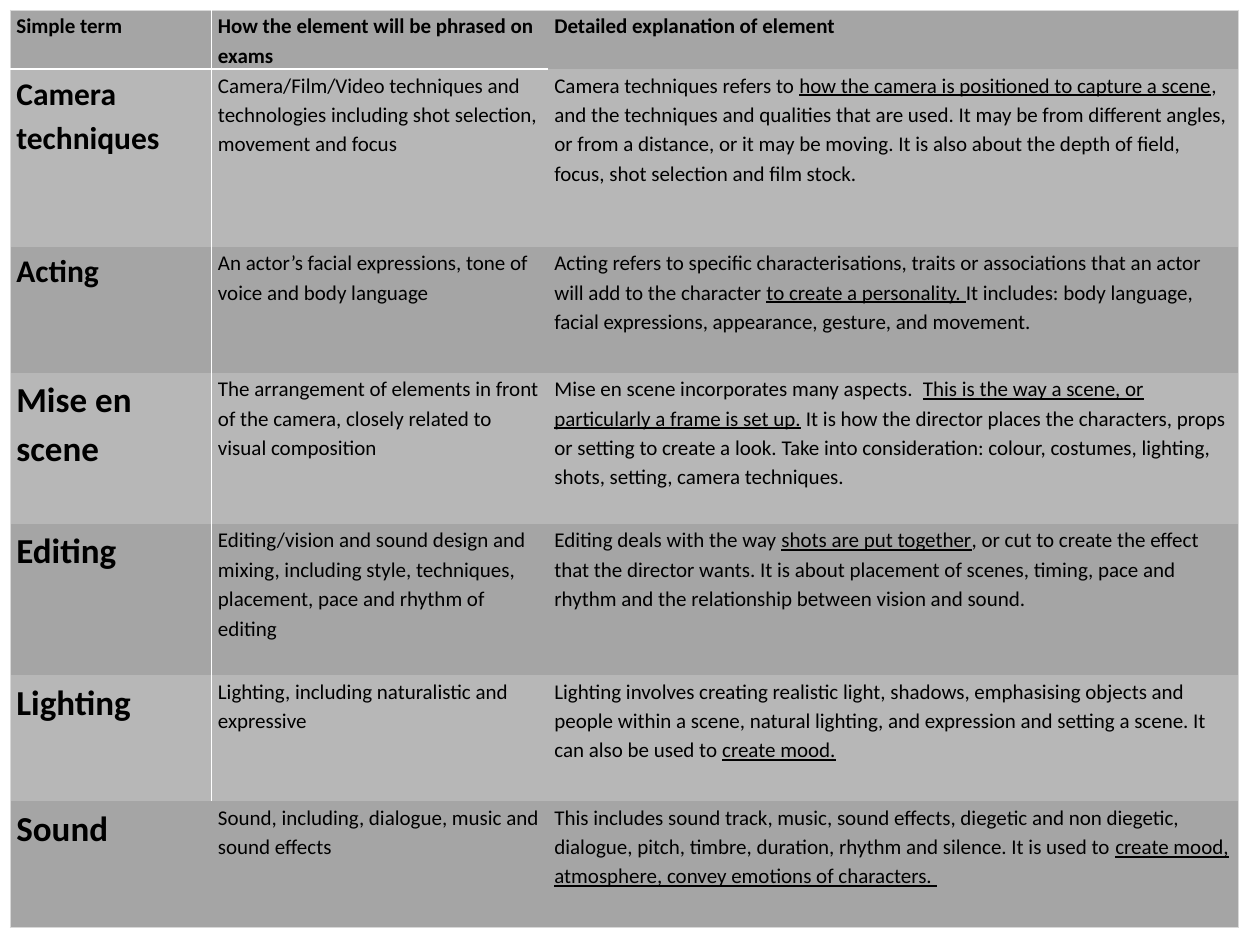
from lxml.etree import SubElement
from pptx import Presentation
from pptx.dml.color import RGBColor
from pptx.oxml.ns import qn
from pptx.util import Inches, Pt

# Content: header, then (term, term size, exam phrasing, explanation spans)
# Every second explanation span is underlined.
HEADER = ("Simple term", "How the element will be phrased on exams",
          "Detailed explanation of element")
ELEMENTS = [
    ("Camera techniques", 18,
     "Camera/Film/Video techniques and technologies including shot selection, "
     "movement and focus",
     ["Camera techniques refers to ",
      "how the camera is positioned to capture a scene",
      ", and the techniques and qualities that are used. It may be from different "
      "angles, or from a distance, or it may be moving. It is also about the depth "
      "of field, focus, shot selection and film stock."]),
    ("Acting", 18,
     "An actor’s facial expressions, tone of voice and body language",
     ["Acting refers to specific characterisations, traits or associations that an "
      "actor will add to the character ",
      "to create a personality. ",
      "It includes: body language, facial expressions, appearance, gesture, and "
      "movement."]),
    ("Mise en scene", 20,
     "The arrangement of elements in front of the camera, closely related to visual "
     "composition",
     ["Mise en scene incorporates many aspects.  ",
      "This is the way a scene, or particularly a frame is set up.",
      " It is how the director places the characters, props or setting to create a "
      "look. Take into consideration: colour, costumes, lighting, shots, setting, "
      "camera techniques."]),
    ("Editing", 20,
     "Editing/vision and sound design and mixing, including style, techniques, "
     "placement, pace and rhythm of editing",
     ["Editing deals with the way ",
      "shots are put together",
      ", or cut to create the effect that the director wants. It is about placement "
      "of scenes, timing, pace and rhythm and the relationship between vision and "
      "sound."]),
    ("Lighting", 20,
     "Lighting, including naturalistic and expressive",
     ["Lighting involves creating realistic light, shadows, emphasising objects and "
      "people within a scene, natural lighting, and expression and setting a scene. "
      "It can also be used to ",
      "create mood."]),
    ("Sound", 20,
     "Sound, including, dialogue, music and sound effects",
     ["This includes sound track, music, sound effects, diegetic and non diegetic, "
      "dialogue, pitch, timbre, duration, rhythm and silence. It is used to ",
      "create mood, atmosphere, convey emotions of characters. "]),
]
COLUMN_WIDTHS = (1.6, 2.67, 5.48)
ROW_HEIGHTS = (0.47, 1.41, 1, 1.2, 1.2, 1, 1)
DARK, LIGHT = "A5A5A5", "B7B7B7"
OUTER, DIVIDER, HEADER_RULE = ("D8D8D8", 0.5), ("FFFFFF", 1), ("FFFFFF", 1.5)
LAST_ROW, LAST_COLUMN = len(ELEMENTS), len(HEADER) - 1


def rgb(value):
    return RGBColor.from_string(value)


def write_cell(cell, spans, size, bold):
    cell.margin_left = cell.margin_right = Inches(0.05)
    cell.margin_top = cell.margin_bottom = 0
    para = cell.text_frame.paragraphs[0]
    para.line_spacing = 1.15
    for index, text in enumerate(spans):
        span = para.add_run()
        span.text = text
        font = span.font
        font.name, font.size, font.bold = "Calibri", Pt(size), bold
        font.underline = index % 2 == 1
        font.color.rgb = rgb("000000")


def cell_borders(row, column):
    """Outer frame, divider after the terms, rule under the first two headings."""
    left = OUTER if column == 0 else None
    right = OUTER if column == LAST_COLUMN else None
    top = OUTER if row == 0 else None
    bottom = OUTER if row == LAST_ROW else None
    if row < LAST_ROW:
        right = DIVIDER if column == 0 else right
        left = DIVIDER if column == 1 else left
    if column < LAST_COLUMN:
        bottom = HEADER_RULE if row == 0 else bottom
        top = HEADER_RULE if row == 1 else top
    return {"a:lnL": left, "a:lnR": right, "a:lnT": top, "a:lnB": bottom}


def draw_borders(cell, borders):
    properties = cell._tc.get_or_add_tcPr()
    for tag, border in borders.items():
        line = SubElement(properties, qn(tag))
        if border is None:
            line.set("w", "0")
            SubElement(line, qn("a:noFill"))
        else:
            color, width = border
            line.set("w", str(Pt(width)))
            fill = SubElement(line, qn("a:solidFill"))
            SubElement(fill, qn("a:srgbClr")).set("val", color)


# Slide
deck = Presentation()
deck.slide_width, deck.slide_height = Inches(10), Inches(7.5)
page = deck.slides.add_slide(deck.slide_layouts[6])

# Table grid
table = page.shapes.add_table(
    len(ROW_HEIGHTS), len(COLUMN_WIDTHS), Inches(0.08), Inches(0.08),
    Inches(sum(COLUMN_WIDTHS)), Inches(sum(ROW_HEIGHTS))).table
for column, width in zip(table.columns, COLUMN_WIDTHS):
    column.width = Inches(width)
for row, height in zip(table.rows, ROW_HEIGHTS):
    row.height = Inches(height)

# Cells as (spans, size, bold)
rows = [[([heading], 12, True) for heading in HEADER]]
for term, size, phrasing, explanation in ELEMENTS:
    rows.append([([term], size, True), ([phrasing], 12, False),
                 (explanation, 12, False)])
for r, contents in enumerate(rows):
    for c, content in enumerate(contents):
        cell = table.cell(r, c)
        write_cell(cell, *content)
        draw_borders(cell, cell_borders(r, c))
        cell.fill.solid()
        cell.fill.fore_color.rgb = rgb(LIGHT if r % 2 else DARK)

deck.save("out.pptx")
